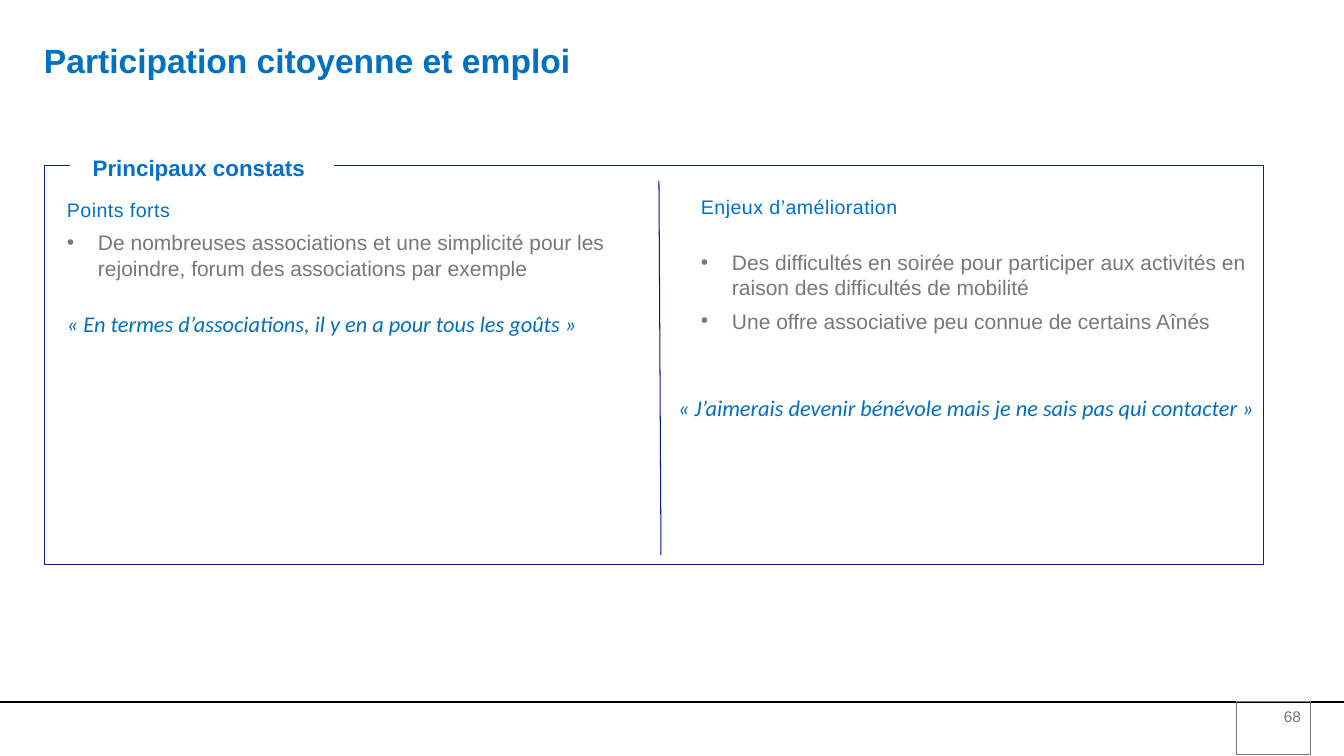
from dataclasses import dataclass

from lxml import etree
from pptx import Presentation
from pptx import util as u
from pptx.dml.color import RGBColor
from pptx.enum import shapes, text
from pptx.oxml import ns

TITLE = "Participation citoyenne et emploi"
PANEL_LABEL = "Principaux constats "
STRENGTHS = {
    "heading": "Points forts",
    "bullets": ["De nombreuses associations et une simplicité pour les rejoindre, "
                "forum des associations par exemple"],
    "quote": "« En termes d’associations, il y en a pour tous les goûts »",
}
ISSUES = {
    "heading": "Enjeux d’amélioration",
    "bullets": ["Des difficultés en soirée pour participer aux activités en raison "
                "des difficultés de mobilité ",
                "Une offre associative peu connue de certains Aînés"],
    "quote": "« J’aimerais devenir bénévole mais je ne sais pas qui contacter »",
}
PAGE_NUMBER = "68"

# Lengths in px: left, top, width, height
WIDTH, HEIGHT = 1344, 756
TITLE_BOX = (44, 44, 1277, 39)
PANEL = (44, 165, 1219, 399)
LABEL_BOX = (70, 156, 264, 23)
STRENGTHS_BOX = (67, 193, 550, 149)
ISSUES_BOX = (701, 190, 555, 151)
ISSUES_QUOTE_BOX = (668, 389, 597, 36)
PAGE_BOX = (1237, 702, 74, 53)
DIVIDER = (659, 181, 661, 555)
FOOTER_LINE = (0, 702, WIDTH, 702)
INSET_X, INSET_Y, BULLET_INDENT = 10, 5, 31


@dataclass(frozen=True)
class Theme:
    font: str = "Arial"
    quote_font: str = "Calibri"
    title: str = "0070C0"
    accent: str = "0070CD"
    body: str = "777877"
    frame: str = "0A1E8E"
    divider: str = "061B8D"
    black: str = "000000"
    white: str = "FFFFFF"
    title_size: int = 24
    label_size: int = 16
    heading_size: int = 14
    body_size: int = 15
    quote_size: int = 16
    page_size: int = 11


theme = Theme()
ALIGN, ANCHOR = text.PP_ALIGN, text.MSO_ANCHOR


def px(length):
    return u.Emu(round(length * 914400 / 100.8))


def add_run(paragraph, words, size, color, font=theme.font, bold=False, italic=False):
    run = paragraph.add_run()
    run.text = words
    run.font.name, run.font.size = font, u.Pt(size)
    run.font.bold, run.font.italic = bold, italic
    run.font.color.rgb = RGBColor.from_string(color)
    return run


def add_quote(paragraph, words):
    add_run(paragraph, words, theme.quote_size, theme.title, theme.quote_font, italic=True)


def set_frame(frame, left=INSET_X, top=INSET_Y, wrap=True, anchor=ANCHOR.TOP):
    frame.margin_left, frame.margin_top = px(left), px(top)
    frame.margin_right, frame.margin_bottom = px(INSET_X), px(INSET_Y)
    frame.word_wrap, frame.vertical_anchor = wrap, anchor
    return frame


def add_text(slide, box, **options):
    shape = slide.shapes.add_textbox(*map(px, box))
    return set_frame(shape.text_frame, **options)


def add_rectangle(slide, box, fill=None, line=None, weight=0.75):
    shape = slide.shapes.add_shape(shapes.MSO_SHAPE.RECTANGLE, *map(px, box))
    shape.shadow.inherit = False
    if fill:
        shape.fill.solid()
        shape.fill.fore_color.rgb = RGBColor.from_string(fill)
    else:
        shape.fill.background()
    if line:
        shape.line.color.rgb = RGBColor.from_string(line)
        shape.line.width = u.Pt(weight)
    else:
        shape.line.fill.background()
    return shape


def add_line(slide, ends, color):
    line = slide.shapes.add_connector(shapes.MSO_CONNECTOR.STRAIGHT, *map(px, ends))
    line.line.color.rgb = RGBColor.from_string(color)
    line.line.width = u.Pt(0.75)
    etree.SubElement(line._element.spPr, ns.qn("a:effectLst"))


def set_bullet(paragraph):
    properties = paragraph._p.get_or_add_pPr()
    properties.set("marL", str(px(BULLET_INDENT)))
    properties.set("indent", str(-px(BULLET_INDENT)))
    color = etree.SubElement(properties, ns.qn("a:buClr"))
    etree.SubElement(color, ns.qn("a:srgbClr"), val=theme.body)
    etree.SubElement(properties, ns.qn("a:buFont"), typeface=theme.font)
    etree.SubElement(properties, ns.qn("a:buChar"), char="•")


def add_findings(slide, box, findings, align, heading_gap):
    frame = add_text(slide, box, left=0)
    heading = frame.paragraphs[0]
    heading.alignment, heading.space_after = align, u.Pt(heading_gap)
    run = add_run(heading, findings["heading"], theme.heading_size, theme.accent)
    run.font._element.set("spc", "30")
    for index, words in enumerate(findings["bullets"]):
        paragraph = frame.add_paragraph()
        paragraph.alignment = align
        paragraph.space_before = u.Pt(6 if index else 0)
        set_bullet(paragraph)
        add_run(paragraph, words, theme.body_size, theme.body)
    return frame


def main():
    presentation = Presentation()
    presentation.slide_width, presentation.slide_height = px(WIDTH), px(HEIGHT)
    slide = presentation.slides.add_slide(presentation.slide_layouts[6])

    add_line(slide, FOOTER_LINE, theme.black)
    title = add_text(slide, TITLE_BOX, left=0, top=0).paragraphs[0]
    title.line_spacing = 0.9
    add_run(title, TITLE, theme.title_size, theme.title, bold=True)

    add_rectangle(slide, PANEL, line=theme.frame, weight=0.25)
    label_shape = add_rectangle(slide, LABEL_BOX, fill=theme.white)
    label = set_frame(label_shape.text_frame, wrap=False, anchor=ANCHOR.MIDDLE).paragraphs[0]
    label.alignment = ALIGN.CENTER
    add_run(label, PANEL_LABEL, theme.label_size, theme.accent, bold=True)

    strengths = add_findings(slide, STRENGTHS_BOX, STRENGTHS, ALIGN.LEFT, 6)
    quote = strengths.add_paragraph()
    quote.space_before = u.Pt(21)
    add_quote(quote, STRENGTHS["quote"])

    add_findings(slide, ISSUES_BOX, ISSUES, ALIGN.JUSTIFY, 22)
    add_line(slide, DIVIDER, theme.divider)
    add_quote(add_text(slide, ISSUES_QUOTE_BOX, wrap=False).paragraphs[0], ISSUES["quote"])

    page_shape = add_rectangle(slide, PAGE_BOX, line=theme.body)
    page = set_frame(page_shape.text_frame).paragraphs[0]
    page.alignment = ALIGN.RIGHT
    add_run(page, PAGE_NUMBER, theme.page_size, theme.body)

    presentation.save("out.pptx")


if __name__ == "__main__":
    main()
